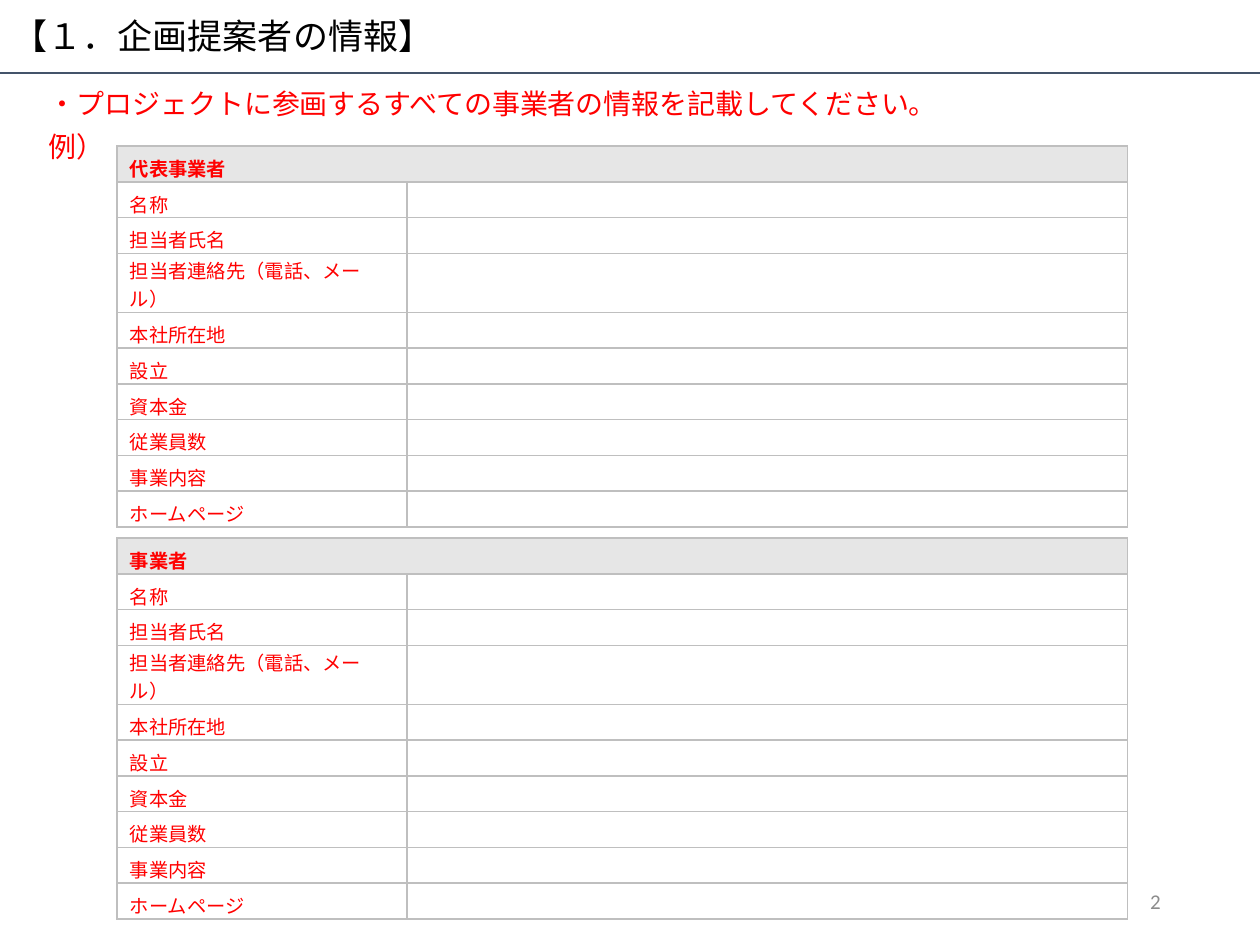
from lxml.etree import SubElement
from pptx import Presentation
from pptx.dml.color import RGBColor
from pptx.enum.shapes import MSO_CONNECTOR
from pptx.enum.text import MSO_ANCHOR, PP_ALIGN
from pptx.oxml.ns import qn
from pptx.util import Inches, Pt

THEME = {
    "font": "Noto Sans CJK JP", "number_font": "Calibri",
    "title": RGBColor(0, 0, 0), "guide": RGBColor(0xFF, 0, 0),
    "rule": RGBColor(0x44, 0x54, 0x6A), "number": RGBColor(0x8C, 0x8C, 0x8C),
    "header": RGBColor(0xE6, 0xE6, 0xE6), "border": "BFBFBF",
    "title_size": 20, "guide_size": 16, "cell_size": 11, "number_size": 12,
}


def write(paragraph, text, size, color, font=THEME["font"], bold=False):
    """Add a run with the same typeface for Latin and East Asian text."""
    run = paragraph.add_run()
    run.text = text
    formats = {"name": font, "size": Pt(size), "bold": bold}
    for name, value in formats.items():
        setattr(run.font, name, value)
    run.font.color.rgb = color
    SubElement(run.font._element, qn("a:ea"), typeface=font)


def add_borders(cell):
    properties = cell._tc.get_or_add_tcPr()
    for position, side in enumerate(("a:lnL", "a:lnR", "a:lnT", "a:lnB")):
        line = properties.makeelement(qn(side), {"w": str(Pt(1))})
        fill = SubElement(line, qn("a:solidFill"))
        SubElement(fill, qn("a:srgbClr"), val=THEME["border"])
        properties.insert(position, line)


prs = Presentation()
prs.slide_width, prs.slide_height = Inches(10), Inches(7.5)
slide = prs.slides.add_slide(prs.slide_layouts[5])

# Title and rule
title = slide.shapes.title
title.left, title.top, title.width, title.height = 0, 0, Inches(10), Inches(0.61)
title.text_frame.vertical_anchor = MSO_ANCHOR.MIDDLE
heading = title.text_frame.paragraphs[0]
heading.alignment = PP_ALIGN.LEFT
heading.line_spacing = 0.9
write(heading, "【１．企画提案者の情報】", THEME["title_size"], THEME["title"])

rule = slide.shapes.add_connector(
    MSO_CONNECTOR.STRAIGHT, 0, Inches(0.58), Inches(10), Inches(0.58))
rule.line.color.rgb = THEME["rule"]
rule.line.width = Pt(1.5)
SubElement(rule._element.spPr, qn("a:effectLst"))

# Instructions
guide = slide.shapes.add_textbox(
    Inches(0.29), Inches(0.69), Inches(9.44), Inches(6.51)).text_frame
guide.word_wrap = True
instruction, example = guide.paragraphs[0], guide.add_paragraph()
example.space_before = Pt(9)
for paragraph, text in (
    (instruction, "・プロジェクトに参画するすべての事業者の情報を記載してください。"),
    (example, "例）"),
):
    paragraph.line_spacing = 0.8
    write(paragraph, text, THEME["guide_size"], THEME["guide"])

# One table for each kind of business
CONTACT = "担当者連絡先（電話、メール）"
ITEMS = ["名称", "担当者氏名", CONTACT, "本社所在地", "設立",
         "資本金", "従業員数", "事業内容", "ホームページ"]
ROW, TALL_ROW = Inches(0.284), Inches(0.468)
CELL_FORMAT = {"margin_top": Inches(0.02), "margin_bottom": 0,
               "vertical_anchor": MSO_ANCHOR.BOTTOM}

for business, top in (("代表事業者", 1.16), ("事業者", 4.27)):
    labels = [business] + ITEMS
    table = slide.shapes.add_table(
        len(labels), 2, Inches(0.93), Inches(top), Inches(8.02),
        ROW * len(ITEMS) + TALL_ROW).table
    table.horz_banding = table.first_row = False
    table.columns[0].width, table.columns[1].width = Inches(2.3), Inches(5.72)
    table.cell(0, 0).merge(table.cell(0, 1))
    for index, label in enumerate(labels):
        is_header = index == 0
        table.rows[index].height = TALL_ROW if label == CONTACT else ROW
        for cell in table.rows[index].cells:
            for name, value in CELL_FORMAT.items():
                setattr(cell, name, value)
            if is_header:
                cell.fill.solid()
                cell.fill.fore_color.rgb = THEME["header"]
            else:
                cell.fill.background()
            add_borders(cell)
        label_cell, answer_cell = table.rows[index].cells
        write(label_cell.text_frame.paragraphs[0], label,
              THEME["cell_size"], THEME["guide"], bold=is_header)
        # Keeps the blank answer from stretching its row
        SubElement(answer_cell.text_frame.paragraphs[0]._p, qn("a:endParaRPr"),
                   sz=str(THEME["cell_size"] * 100))

# Page number
page = slide.shapes.add_textbox(
    Inches(7.06), Inches(6.95), Inches(2.25), Inches(0.4)).text_frame
page.word_wrap = True
page.vertical_anchor = MSO_ANCHOR.MIDDLE
page.paragraphs[0].alignment = PP_ALIGN.RIGHT
write(page.paragraphs[0], "2", THEME["number_size"], THEME["number"],
      THEME["number_font"])

prs.save("out.pptx")
